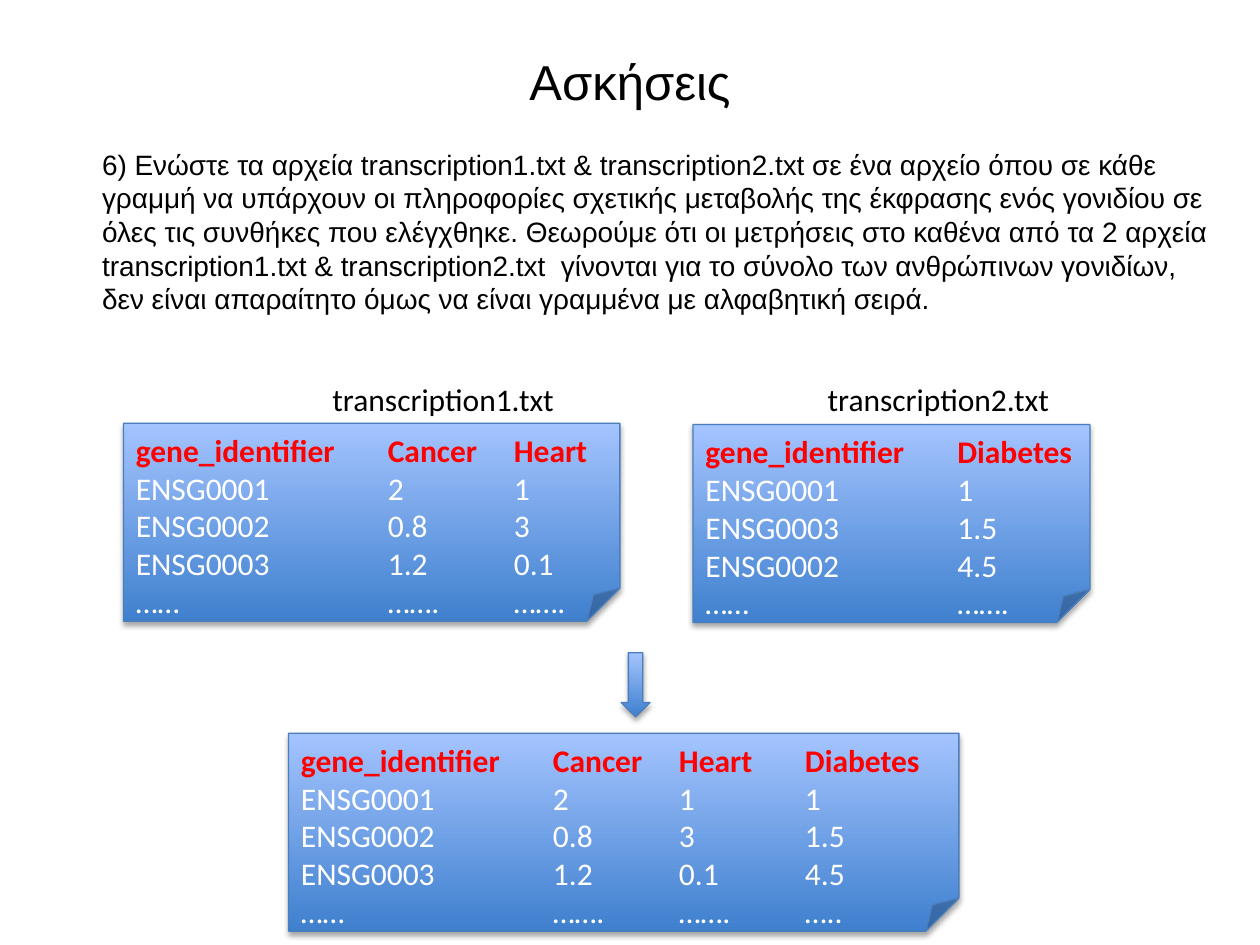
from dataclasses import dataclass
from lxml.etree import SubElement as Sub
from pptx import Presentation
from pptx.dml.color import RGBColor as Rgb
from pptx.enum.shapes import MSO_SHAPE as Form
from pptx.enum.text import MSO_ANCHOR as Anchor, PP_ALIGN as Align
from pptx.oxml.ns import qn
from pptx.util import Inches, Pt


@dataclass(frozen=True)
class Theme:
    ink: Rgb = Rgb(0, 0, 0)
    head: Rgb = Rgb(0xFF, 0, 0)
    cell: Rgb = Rgb(0xFF, 0xFF, 0xFF)
    edge: Rgb = Rgb(0x4B, 0x7E, 0xBC)
    low: Rgb = Rgb(0x3F, 0x80, 0xCE)
    high: Rgb = Rgb(0xA4, 0xC4, 0xFF)
    sans: str = "Arial"
    body: str = "Calibri"
    title: Pt = Pt(28)
    task: Pt = Pt(16)
    note: Pt = Pt(18)


@dataclass(frozen=True)
class Box:
    left: float
    top: float
    width: float
    height: float

    def dims(self) -> tuple:
        return tuple(map(Inches, (self.left, self.top, self.width, self.height)))


@dataclass(frozen=True)
class Note:
    box: Box
    rows: list


@dataclass(frozen=True)
class Label:
    box: Box
    text: str


THEME = Theme()
TITLE = "Ασκήσεις"
TASK = (
    "6) Ενώστε τα αρχεία transcription1.txt & transcription2.txt σε ένα αρχείο "
    "όπου σε κάθε γραμμή να υπάρχουν οι πληροφορίες σχετικής μεταβολής της "
    "έκφρασης ενός γονιδίου σε όλες τις συνθήκες που ελέγχθηκε. Θεωρούμε ότι οι "
    "μετρήσεις στο καθένα από τα 2 αρχεία transcription1.txt & transcription2.txt  "
    "γίνονται για το σύνολο των ανθρώπινων γονιδίων, δεν είναι απαραίτητο όμως να "
    "είναι γραμμένα με αλφαβητική σειρά."
)
LABELS = [
    Label(Box(2.54, 2.97, 1.99, 0.4), "transcription1.txt"),
    Label(Box(6.47, 2.97, 1.99, 0.4), "transcription2.txt"),
]
NOTES = [
    Note(Box(0.98, 3.36, 3.94, 1.57), [
        ("gene_identifier", "Cancer", "Heart"),
        ("ENSG0001", "2", "1"),
        ("ENSG0002", "0.8", "3"),
        ("ENSG0003", "1.2", "0.1"),
        ("……", "…….", "……."),
    ]),
    Note(Box(5.5, 3.37, 3.15, 1.57), [
        ("gene_identifier", "Diabetes"),
        ("ENSG0001", "1"),
        ("ENSG0003", "1.5"),
        ("ENSG0002", "4.5"),
        ("……", "……."),
    ]),
    Note(Box(2.29, 5.82, 5.32, 1.57), [
        ("gene_identifier", "Cancer", "Heart", "Diabetes"),
        ("ENSG0001", "2", "1", "1"),
        ("ENSG0002", "0.8", "3", "1.5"),
        ("ENSG0003", "1.2", "0.1", "4.5"),
        ("……", "…….", "…….", "….."),
    ]),
]
ARROW = Box(4.93, 5.18, 0.23, 0.51)


def style(item, form: dict) -> None:
    for key, value in form.items():
        setattr(item, key, value)


def write(para, text: str, name: str, size: Pt, color: Rgb, bold: bool = False) -> None:
    run = para.add_run()
    run.text = text
    style(run.font, {"name": name, "size": size, "bold": bold})
    run.font.color.rgb = color


def add_text(slide, box: Box, text: str, name: str, size: Pt, form: dict) -> None:
    frame = slide.shapes.add_textbox(*box.dims()).text_frame
    style(frame, form)
    write(frame.paragraphs[0], text, name, size, THEME.ink)


def add_form(slide, kind: Form, box: Box):
    """Add a shape with the blue gradient, thin edge and soft shadow."""
    shape = slide.shapes.add_shape(kind, *box.dims())
    shape.fill.gradient()
    shape.fill.gradient_angle = 90
    for stop, color in zip(shape.fill.gradient_stops, (THEME.low, THEME.high)):
        stop.color.rgb = color
    shape.line.color.rgb = THEME.edge
    shape.line.width = Pt(0.75)
    shape.shadow.inherit = False
    glow = Sub(shape._element.spPr.find(qn("a:effectLst")), qn("a:outerShdw"),
               blurRad=str(Pt(3.1)), dist=str(Pt(1.8)), dir="5400000", rotWithShape="0")
    tint = Sub(glow, qn("a:srgbClr"), val="000000")
    Sub(tint, qn("a:alpha"), val="35000")
    return shape


def add_note(slide, note: Note) -> None:
    frame = add_form(slide, Form.FOLDED_CORNER, note.box).text_frame
    style(frame, {"word_wrap": True, "vertical_anchor": Anchor.TOP,
                  "margin_top": Inches(0.06), "margin_bottom": 0})
    for i, row in enumerate(note.rows):
        para = frame.add_paragraph() if i else frame.paragraphs[0]
        para.alignment = Align.JUSTIFY
        # Value columns start two inches in, one inch apart
        tabs = Sub(para._p.get_or_add_pPr(), qn("a:tabLst"))
        for col in range(1, len(row)):
            Sub(tabs, qn("a:tab"), pos=str(Inches(col + 1)), algn="l")
        color = THEME.cell if i else THEME.head
        write(para, "\t".join(row), THEME.body, THEME.note, color, bold=not i)


def main() -> None:
    deck = Presentation()
    style(deck, {"slide_width": Inches(10), "slide_height": Inches(7.5)})
    slide = deck.slides.add_slide(deck.slide_layouts[5])

    # Title
    title = slide.shapes.title
    left, top, width, height = Box(0.5, 0.3, 9, 0.68).dims()
    style(title, {"left": left, "top": top, "width": width, "height": height})
    title.text_frame.vertical_anchor = Anchor.MIDDLE
    para = title.text_frame.paragraphs[0]
    para.alignment = Align.CENTER
    write(para, TITLE, THEME.sans, THEME.title, THEME.ink)

    # Task
    add_text(slide, Box(0.21, 1.12, 9.61, 1.45), TASK, THEME.sans, THEME.task,
             {"word_wrap": True, "margin_left": Inches(0.6)})

    # Files, their names and the merge arrow
    for note in NOTES:
        add_note(slide, note)
    for label in LABELS:
        add_text(slide, label.box, label.text, THEME.body, THEME.note,
                 {"word_wrap": False})
    add_form(slide, Form.DOWN_ARROW, ARROW)

    deck.save("out.pptx")


if __name__ == "__main__":
    main()
